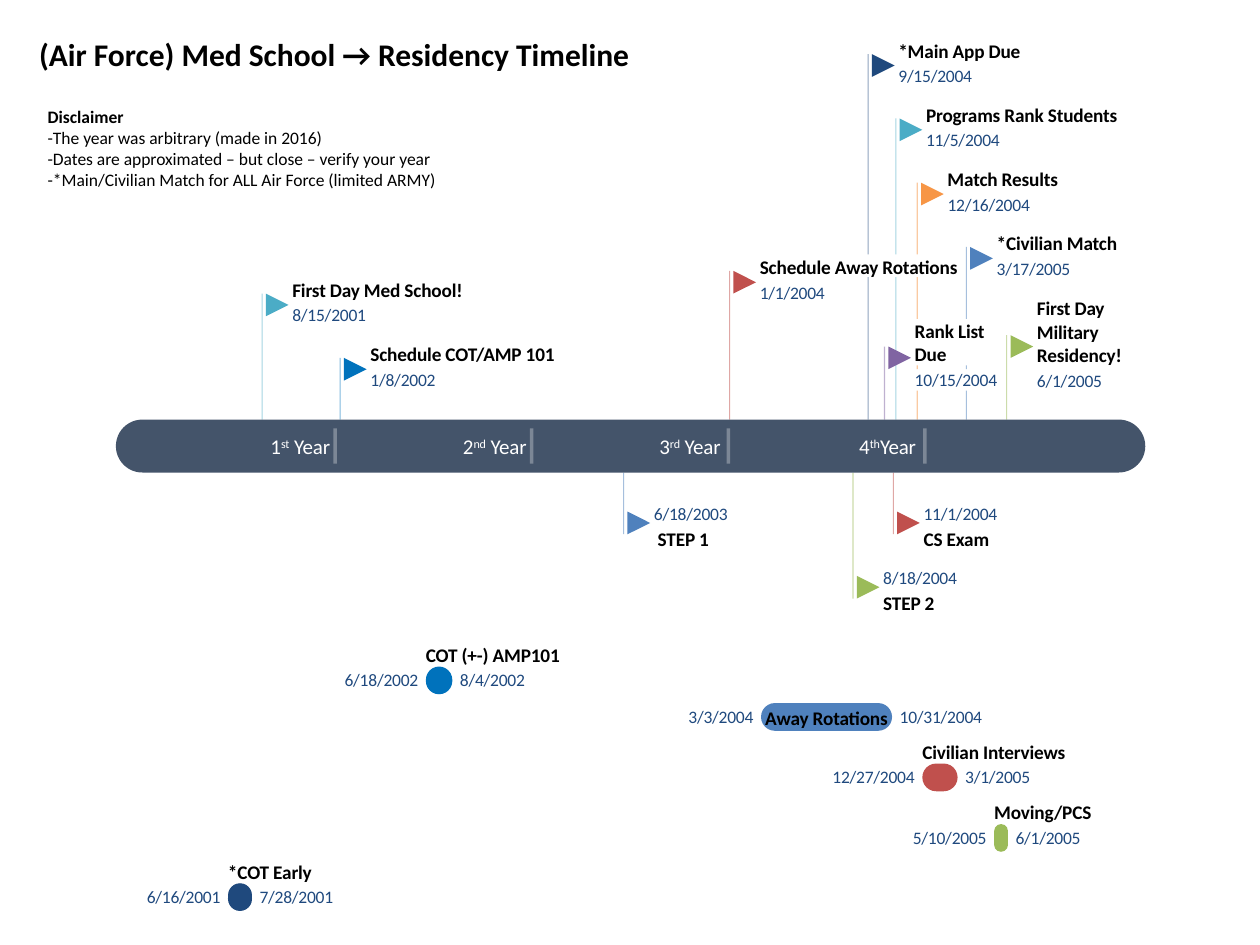
"""Build a one-slide timeline from medical school to residency."""
from pptx import Presentation
from pptx.dml.color import RGBColor
from pptx.enum import shapes, text
from pptx.oxml.ns import qn
from pptx.util import Inches, Pt
from lxml import etree

LEFT, CENTER, RIGHT = text.PP_ALIGN.LEFT, text.PP_ALIGN.CENTER, text.PP_ALIGN.RIGHT
BLACK, DATE_BLUE, WHITE = "000000", "1F497E", "FFFFFF"
BAR_TOP, BAR_BOTTOM = 3.33, 3.75

deck = Presentation()
deck.slide_width, deck.slide_height = Inches(10), Inches(7.5)
page = deck.slides.add_slide(deck.slide_layouts[5])


def add_label(parts, left, top, width, height, size=11, color=BLACK, align=LEFT, wrap=False):
    box = page.shapes.add_textbox(Inches(left), Inches(top), Inches(width), Inches(height))
    frame = box.text_frame
    frame.margin_left = frame.margin_right = frame.margin_top = frame.margin_bottom = 0
    frame.word_wrap = wrap
    frame.vertical_anchor = text.MSO_ANCHOR.MIDDLE
    para = frame.paragraphs[0]
    para.alignment = align
    for index, part in enumerate(parts):
        span = para.add_run()
        span.text = part
        span.font.name, span.font.size = "Calibri", Pt(size)
        span.font.bold = size == 11
        span.font.color.rgb = RGBColor.from_string(color)
        properties = span.font._element
        properties.set("spc", "-10")
        if index == 1:
            properties.set("baseline", "30000")


def add_line(x, top, bottom, color, width, opacity):
    line = page.shapes.add_connector(
        shapes.MSO_CONNECTOR.STRAIGHT, Inches(x), Inches(top), Inches(x), Inches(bottom))
    line.line.width = Pt(width)
    line.line.color.rgb = RGBColor.from_string(color)
    properties = line._element.spPr
    tint = properties.find(".//" + qn("a:srgbClr"))
    etree.SubElement(tint, qn("a:alpha")).set("val", str(opacity * 1000))
    etree.SubElement(properties, qn("a:effectLst"))


title = page.shapes.title
title.left, title.top, title.width, title.height = Inches(0.21), Inches(0.23), Inches(4.92), Inches(0.4)
title.text_frame.text = "(Air Force) Med School → Residency Timeline"
title.text_frame.word_wrap = False
title.text_frame.vertical_anchor = text.MSO_ANCHOR.TOP
heading = title.text_frame.paragraphs[0]
heading.alignment = LEFT
heading.font.name, heading.font.size, heading.font.bold = "Calibri", Pt(18), True
heading.font.color.rgb = RGBColor.from_string(BLACK)

disclaimer = page.shapes.add_textbox(Inches(0.28), Inches(0.79), Inches(3.29), Inches(0.77))
disclaimer.text_frame.word_wrap = False
disclaimer.text_frame.text = "\n".join([
    "Disclaimer",
    "-The year was arbitrary (made in 2016)",
    "-Dates are approximated – but close – verify your year",
    "-*Main/Civilian Match for ALL Air Force (limited ARMY)",
])
for index, para in enumerate(disclaimer.text_frame.paragraphs):
    para.font.name, para.font.size, para.font.bold = "Calibri", Pt(10), index == 0
    para.font.color.rgb = RGBColor.from_string(BLACK)

flags_above = [
    ("First Day Med School!", "8/15/2001", 2.08, 2.33, "4BACC6", 1.39, 1),
    ("Schedule COT/AMP 101", "1/8/2002", 2.7, 2.84, "0072BC", 1.5, 1),
    ("Schedule Away Rotations", "1/1/2004", 5.79, 2.15, "C0504D", 1.61, 1),
    ("*Main App Due", "9/15/2004", 6.89, 0.43, "1F497D", 0.99, 1),
    ("Rank List Due", "10/15/2004", 7.02, 2.75, "8064A2", 0.61, 2),
    ("Programs Rank Students", "11/5/2004", 7.11, 0.94, "4BACC6", 1.56, 1),
    ("Match Results", "12/16/2004", 7.28, 1.45, "F79646", 0.93, 1),
    ("*Civilian Match", "3/17/2005", 7.67, 1.96, "4F81BD", 0.99, 1),
    ("First Day Military Residency!", "6/1/2005", 7.99, 2.66, "9BBB59", 0.69, 3),
]
flags_below = [
    ("STEP 1", "6/18/2003", 4.95, 4.06, "4F81BD", 0.27),
    ("STEP 2", "8/18/2004", 6.77, 4.57, "9BBB59", 0.24),
    ("CS Exam", "11/1/2004", 7.09, 4.06, "C0504D", 0.24),
]
gaps = [(6.03, 7.64, 2.02, 2.2), (7.26, 7.87, 2.53, 2.9), (7.26, 7.94, 2.93, 3.1)]
blocks = []

for name, date, x, top, color, width, rows in flags_above:
    start = top
    for gap_left, gap_right, gap_top, gap_bottom in gaps:
        if gap_left < x < gap_right and start < gap_top:
            add_line(x, start, gap_top, color, 0.6, 50)
            start = gap_bottom
    add_line(x, start, BAR_TOP, color, 0.6, 50)
    height = 0.19 * rows
    label_top = top - 0.03 - height / 2
    add_label([name], x + 0.24, label_top, width, height, wrap=rows > 1)
    add_label([date], x + 0.24, label_top + height + 0.02, 0.68, 0.17, 10, DATE_BLUE)
    blocks.append((shapes.MSO_SHAPE.FLOWCHART_MERGE, x + 0.03, top, 0.18, 0.18, color))

for name, date, x, top, color, indent in flags_below:
    add_line(x, BAR_BOTTOM, top + 0.18, color, 0.6, 50)
    add_label([date], x + 0.24, top - 0.07, 0.68, 0.17, 10, DATE_BLUE)
    add_label([name], x + indent, top + 0.12, 0.54, 0.19)
    blocks.append((shapes.MSO_SHAPE.FLOWCHART_MERGE, x + 0.03, top, 0.18, 0.18, color))

periods = [
    ("COT (+-) AMP101", "6/18/2002", "8/4/2002", 3.38, 5.29, 0.21, "0072BC"),
    ("Away Rotations", "3/3/2004", "10/31/2004", 6.04, 5.58, 1.04, "4F81BD"),
    ("Civilian Interviews", "12/27/2004", "3/1/2005", 7.32, 6.06, 0.28, "C0504D"),
    ("Moving/PCS", "5/10/2005", "6/1/2005", 7.89, 6.54, 0.11, "9BBB59"),
    ("*COT Early", "6/16/2001", "7/28/2001", 1.81, 7.01, 0.19, "1F497D"),
]
blocks.append((shapes.MSO_SHAPE.ROUNDED_RECTANGLE, 0.92, BAR_TOP, 8.17, 0.42, "44546A"))
for name, begin, end, left, top, width, color in periods:
    blocks.append((shapes.MSO_SHAPE.ROUNDED_RECTANGLE, left, top, width, 0.22, color))

for kind, left, top, width, height, color in blocks:
    block = page.shapes.add_shape(kind, Inches(left), Inches(top), Inches(width), Inches(height))
    block.shadow.inherit = False
    block.fill.solid()
    block.fill.fore_color.rgb = RGBColor.from_string(color)
    block.line.fill.background()
    if kind == shapes.MSO_SHAPE.FLOWCHART_MERGE:
        block.rotation = 270
    else:
        block.adjustments[0] = 0.5

for name, begin, end, left, top, width, color in periods:
    add_label([begin], left - 0.74, top + 0.02, 0.68, 0.17, 10, DATE_BLUE, RIGHT)
    add_label([end], left + width + 0.06, top + 0.02, 0.68, 0.17, 10, DATE_BLUE)
    if width > 1:
        add_label([name], left, top + 0.02, width, 0.19, align=CENTER)
    else:
        add_label([name], left, top - 0.19, 1.17, 0.19)

years = [("1", "st", " Year", 2.62), ("2", "nd", " Year", 4.18),
         ("3", "rd", " Year", 5.72), ("4", "th", "Year", 7.27)]
for index, (number, suffix, word, right) in enumerate(years):
    add_label([number, suffix, word], right - 0.7, 3.44, 0.7, 0.2, 12, WHITE, RIGHT, True)
    add_line(2.66 + 1.56 * index, 3.4, 3.68, WHITE, 2, 30)

deck.save("out.pptx")
